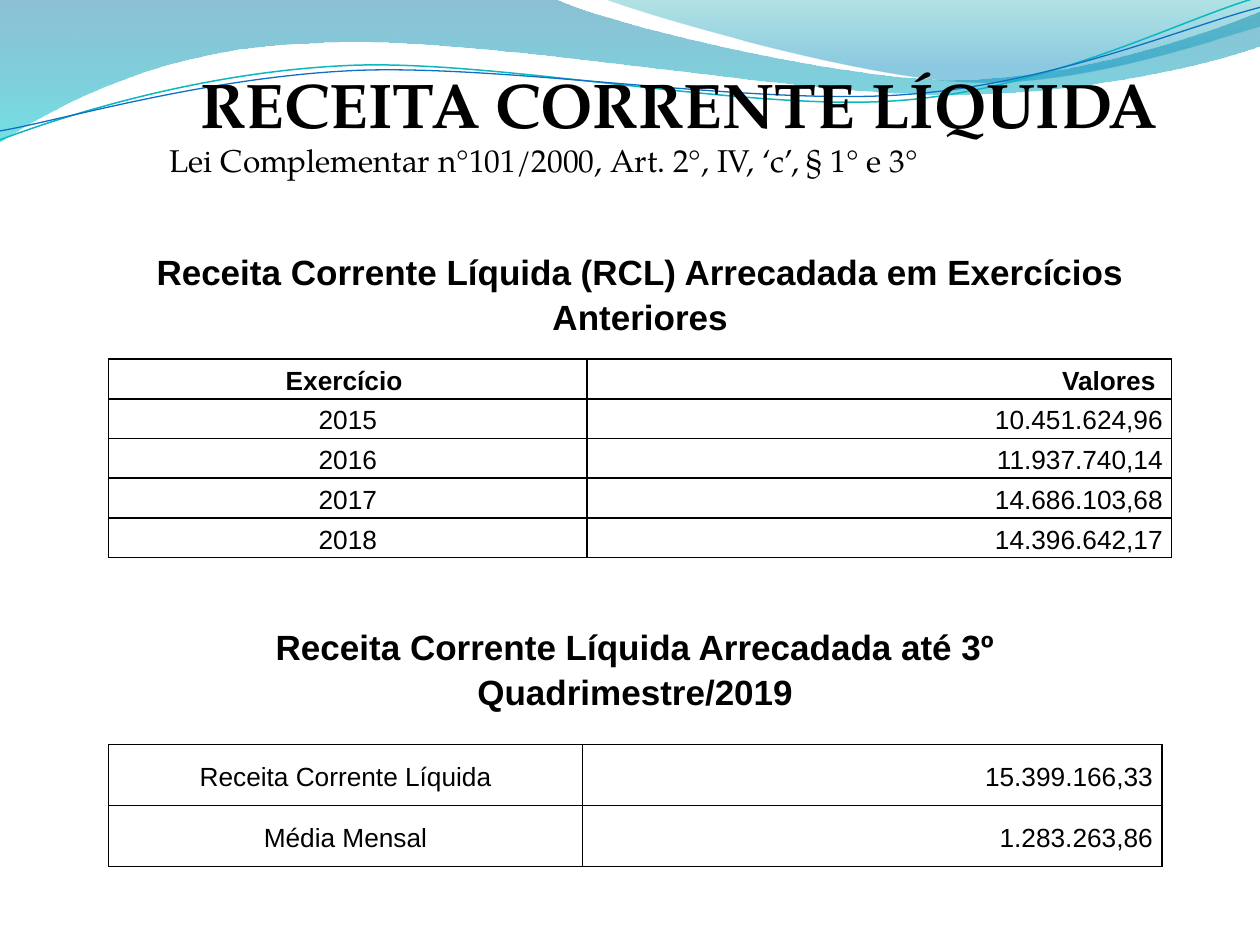
from pptx import Presentation
from pptx.util import Cm, Pt
from pptx.dml.color import RGBColor
from pptx.enum import text as t
from pptx.oxml import ns, xmlchemy as xc

HUES = {
    "ink": "000000", "sea": "0074A1", "aqua": "00C6CF", "teal": "00A1A9",
    "sky": "008BBF", "line": "0AB8BF", "blue": "0F6FC6",
}
BARE = "{2D5ABB26-0587-4C30-8999-92F81FD0307C}"
LEFT, MID, RIGHT = t.PP_ALIGN.LEFT, t.PP_ALIGN.CENTER, t.PP_ALIGN.RIGHT


def rgb(name):
    return RGBColor.from_string(HUES[name])


def write(para, words, font="Arial", size=15, bold=False, align=LEFT, space=None):
    para.alignment = align
    if space:
        para.line_spacing = space
    run = para.add_run()
    run.text = words
    run.font.name = font
    run.font.size = Pt(size)
    run.font.bold = bold
    run.font.color.rgb = rgb("ink")


def child(node, tag, **attrs):
    item = xc.OxmlElement(tag)
    for key, value in attrs.items():
        item.set(key, str(value))
    node.append(item)
    return item


class Deck:
    face = "TeX Gyre Pagella"

    def __init__(self, slide):
        self.slide = slide

    def curve(self, start, parts, close):
        form = self.slide.shapes.build_freeform(*map(Cm, start), scale=1.0)
        form.add_line_segments([tuple(map(Cm, part[-2:])) for part in parts], close=close)
        shape = form.convert_to_shape()
        shape.shadow.inherit = False
        legs = list(shape.element.iter(ns.qn("a:lnTo")))
        for leg, part in zip(legs, parts):
            if len(part) == 6:
                bend = xc.OxmlElement("a:cubicBezTo")
                for x, y in zip(part[::2], part[1::2]):
                    child(bend, "a:pt", x=Cm(x) - shape.left, y=Cm(y) - shape.top)
                leg.getparent().replace(leg, bend)
        return shape

    def wave(self, start, parts, stops):
        shape = self.curve(start, parts, True)
        shape.line.fill.background()
        shape.fill.gradient()
        shape.fill.gradient_angle = 270
        for stop, (place, hue, _) in zip(shape.fill.gradient_stops, stops):
            stop.position = place
            stop.color.rgb = rgb(hue)
        tints = shape.element.spPr.iter(ns.qn("a:srgbClr"))
        for tint, (_, _, alpha) in zip(tints, stops):
            child(tint, "a:alpha", val=alpha * 1000)

    def stroke(self, start, parts, hue, width):
        shape = self.curve(start, parts, False)
        shape.fill.background()
        shape.line.color.rgb = rgb(hue)
        shape.line.width = Pt(width)

    def title(self, box, head, note):
        frame = self.slide.shapes.add_textbox(*map(Cm, box)).text_frame
        frame.word_wrap = True
        write(frame.paragraphs[0], head, font=self.face, size=36, bold=True, align=MID)
        write(frame.add_paragraph(), note, font=self.face, size=18)

    def cell(self, cell, words, sides, **style):
        cell.margin_left = cell.margin_right = Cm(0.18)
        cell.margin_top = cell.margin_bottom = Cm(0.03)
        cell.vertical_anchor = t.MSO_ANCHOR.MIDDLE
        props = cell._tc.get_or_add_tcPr()
        for side in sides:
            edge = child(props, f"a:ln{side}", w=Pt(1))
            child(child(edge, "a:solidFill"), "a:srgbClr", val=HUES["ink"])
        cell.fill.background()
        if words:
            write(cell.text_frame.paragraphs[0], words, space=1.15, **style)

    def table(self, left, top, widths, head, tall, rows, pitch, bold=False):
        size = (sum(widths), tall + pitch * len(rows))
        grid = self.slide.shapes.add_table(
            len(rows) + 1, 2, *map(Cm, (left, top, *size))).table
        grid.first_row = grid.horz_banding = False
        grid._tbl.tblPr.find(ns.qn("a:tableStyleId")).text = BARE
        for col, wide in zip(grid.columns, widths):
            col.width = Cm(wide)
        for i, row in enumerate(grid.rows):
            row.height = Cm(pitch if i else tall)
        grid.cell(0, 0).merge(grid.cell(0, 1))
        self.cell(grid.cell(0, 0), head, "B", size=20, bold=True, align=MID)
        self.cell(grid.cell(0, 1), "", "B")
        for i, row in enumerate(rows, 1):
            for j, words in enumerate(row):
                self.cell(grid.cell(i, j), words, "LRTB",
                          bold=bold and i == 1, align=(MID, RIGHT)[j])


def main():
    show = Presentation()
    show.slide_width, show.slide_height = Cm(25.4), Cm(19.05)
    deck = Deck(show.slides.add_slide(show.slide_layouts[6]))

    deck.wave((0, 0), [
        (11.18, -0.03), (12.09, 0.43, 16.87, 1.6, 19.25, 1.6),
        (21.67, 1.6, 24.33, 0.66, 25.4, 0.23), (25.43, 0.91),
        (24.97, 1.12, 22.1, 1.93, 18.95, 1.9),
        (15.8, 1.9, 9.7, 0.71, 6.53, 0.86),
        (3.28, 0.91, 1.17, 2.11, -0.03, 2.87), (0, 0),
    ], [(0, "sea", 45), (1, "aqua", 55)])
    deck.wave((12.17, -0.03), [
        (12.93, 0.28, 17.32, 1.57, 19.53, 1.65),
        (21.74, 1.75, 24.41, 0.81, 25.4, 0.53), (25.4, 0), (12.17, -0.03),
    ], [(0, "teal", 30), (0.8, "sky", 45)])
    deck.stroke((0, 2.82), [
        (1.22, 2.36, 4.01, 1.45, 7.04, 1.32),
        (10.03, 1.19, 15.06, 2.26, 18.11, 2.03),
        (21.16, 1.8, 23.83, 0.38, 25.35, -0.05),
    ], "line", 0.85)
    deck.stroke((0, 2.64), [
        (1.19, 2.44, 4.17, 1.55, 7.19, 1.42),
        (10.24, 1.3, 15.16, 2.13, 18.21, 1.91),
        (21.23, 1.7, 23.9, 0.53, 25.4, 0.15),
    ], "blue", 0.75)

    deck.title((3.17, 1.19, 21.03, 2.57), "RECEITA CORRENTE LÍQUIDA",
               "Lei Complementar n°101/2000, Art. 2°, IV, ‘c’, § 1° e 3°")
    deck.table(2.19, 4.57, (9.64, 11.79),
               "Receita Corrente Líquida (RCL) Arrecadada em Exercícios Anteriores", 2.67, [
                   ("Exercício ", "Valores "),
                   ("2015", "10.451.624,96"),
                   ("2016", "11.937.740,14"),
                   ("2017", "14.686.103,68"),
                   ("2018", "14.396.642,17"),
               ], 0.8, bold=True)
    deck.table(2.19, 11.92, (9.55, 11.68),
               "Receita Corrente Líquida Arrecadada até 3º Quadrimestre/2019", 3.09, [
                   ("Receita Corrente Líquida", "15.399.166,33"),
                   ("Média Mensal", "1.283.263,86"),
               ], 1.23)
    show.save("out.pptx")


if __name__ == "__main__":
    main()
